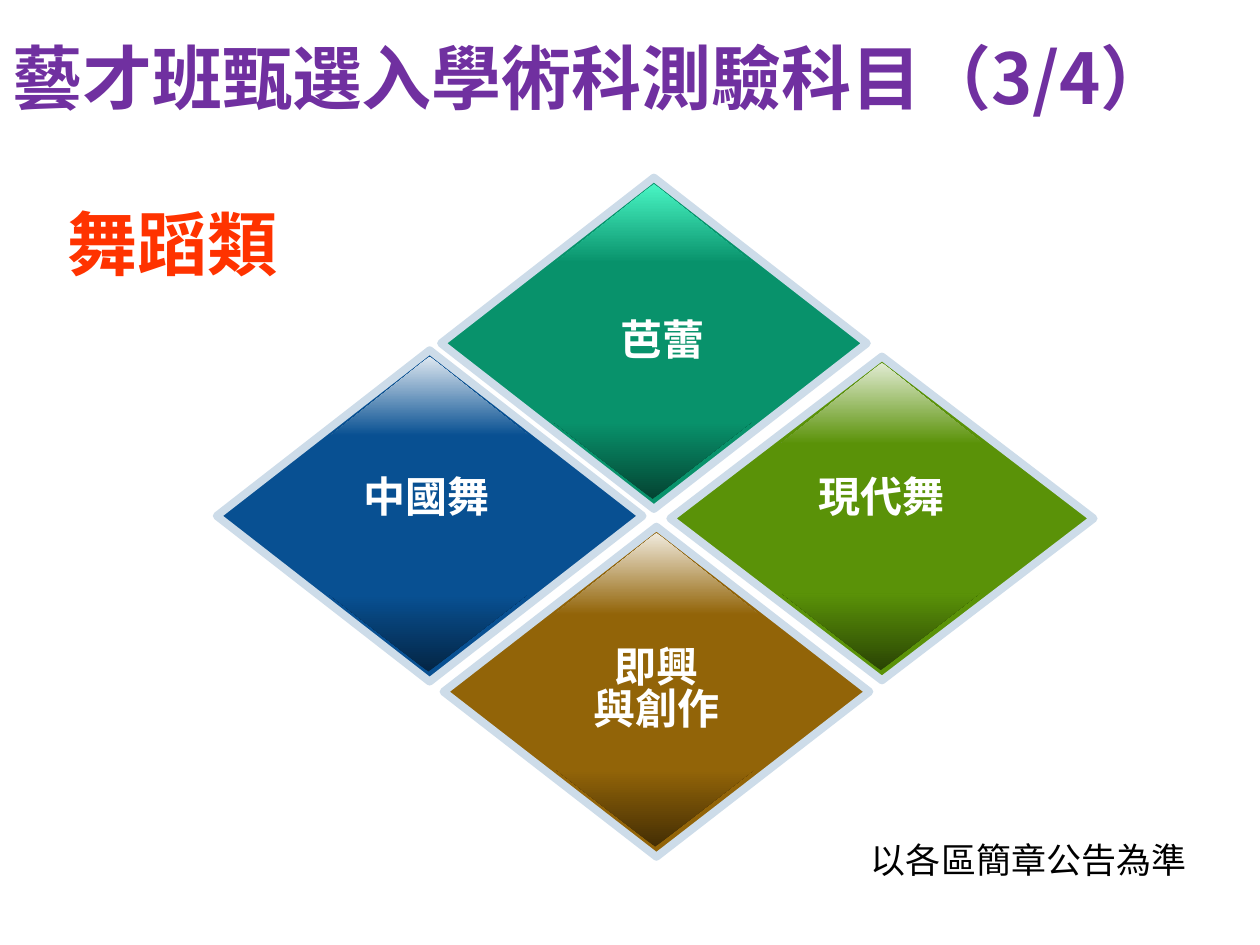
from pptx import Presentation
from pptx.dml.color import RGBColor
from pptx.enum.shapes import MSO_SHAPE
from pptx.enum.text import MSO_ANCHOR, PP_ALIGN
from pptx.util import Inches, Pt

DIAMOND, TRIANGLE = MSO_SHAPE.DIAMOND, MSO_SHAPE.ISOSCELES_TRIANGLE
CENTER, LEFT = PP_ALIGN.CENTER, PP_ALIGN.LEFT
TOP, MIDDLE = MSO_ANCHOR.TOP, MSO_ANCHOR.MIDDLE

COLUMNS, ROWS = 10, 7.5
FONT = "Noto Sans CJK SC"

WHITE = RGBColor(0xFF, 0xFF, 0xFF)
BLACK = RGBColor(0x00, 0x00, 0x00)
PURPLE = RGBColor(0x70, 0x30, 0xA0)
RED = RGBColor(0xFF, 0x33, 0x00)
PALE_BLUE = RGBColor(0xCD, 0xDC, 0xE9)
BROWN = RGBColor(0x92, 0x64, 0x08)
BROWN_LIGHT = RGBColor(0xF0, 0xEA, 0xDD)
BROWN_DARK = RGBColor(0x44, 0x2E, 0x04)
TEAL = RGBColor(0x08, 0x92, 0x6B)
TEAL_LIGHT = RGBColor(0x49, 0xF5, 0xC4)
TEAL_DARK = RGBColor(0x04, 0x44, 0x32)
BLUE = RGBColor(0x08, 0x50, 0x92)
BLUE_LIGHT = RGBColor(0xDD, 0xE7, 0xF0)
BLUE_DARK = RGBColor(0x04, 0x25, 0x44)
GREEN = RGBColor(0x5A, 0x92, 0x08)
GREEN_LIGHT = RGBColor(0xE1, 0xEB, 0xD2)
GREEN_DARK = RGBColor(0x2A, 0x44, 0x04)

TITLE = {"size": Pt(40), "bold": True}
LABEL = {"size": Pt(24), "bold": True}
NOTE = {"size": Pt(20), "bold": False}

DIAMONDS = [
    ((3.52, 4.18, 3.38, 2.62), BROWN, BROWN_LIGHT, BROWN_DARK, 1.62),
    ((3.5, 1.41, 3.38, 2.63), TEAL, TEAL_LIGHT, TEAL_DARK, 1.57),
    ((1.72, 2.78, 3.38, 2.63), BLUE, BLUE_LIGHT, BLUE_DARK, 1.57),
    ((5.32, 2.83, 3.36, 2.57), GREEN, GREEN_LIGHT, GREEN_DARK, 1.61),
]
LABELS = [
    ((4, 2.5, 2.51, 0.69), ["芭蕾"]),
    ((2.33, 3.75, 2.11, 0.69), ["中國舞"]),
    ((5.87, 3.75, 2.26, 0.69), ["現代舞"]),
    ((4.21, 5.1, 2, 1.24), ["即興", "與創作"]),
]


class SubjectSlide:
    def __init__(self, presentation):
        self.column = presentation.slide_width / COLUMNS
        self.row = presentation.slide_height / ROWS
        self.slide = presentation.slides.add_slide(presentation.slide_layouts[6])

    def place(self, area):
        units = (self.column, self.row) * 2
        return [round(length * unit) for length, unit in zip(area, units)]

    def shape(self, kind, area):
        shape = self.slide.shapes.add_shape(kind, *self.place(area))
        shape.shadow.inherit = False
        return shape

    def cap(self, area, tip, base, flipped=False):
        shape = self.shape(TRIANGLE, area)
        shape.line.fill.background()
        shape.fill.gradient()
        shape.fill.gradient_angle = 270
        for stop, color in zip(shape.fill.gradient_stops, (tip, base)):
            stop.color.rgb = color
        if flipped:
            shape._element.spPr.xfrm.set("flipV", "1")

    def diamond(self, area, color, light, dark, cap_width):
        shape = self.shape(DIAMOND, area)
        shape.fill.solid()
        shape.fill.fore_color.rgb = color
        shape.line.color.rgb = PALE_BLUE
        shape.line.width = Pt(4.5)
        left, top, width, height = area
        middle = left + width / 2
        cap_height = cap_width * 0.4
        self.cap((middle - cap_width / 2, top + 0.05, cap_width, cap_height), light, color)
        base_width, base_height = 1.57, 0.61
        base_top = top + height - 0.08 - base_height
        self.cap((middle - 0.01 - base_width / 2, base_top, base_width, base_height),
                 dark, color, flipped=True)

    def text(self, area, lines, style, color, align=CENTER, anchor=TOP, wrap=True, spacing=0.84):
        frame = self.slide.shapes.add_textbox(*self.place(area)).text_frame
        frame.word_wrap = wrap
        frame.vertical_anchor = anchor
        frame.text = "\n".join(lines)
        for paragraph in frame.paragraphs:
            paragraph.alignment = align
            paragraph.line_spacing = spacing
            for run in paragraph.runs:
                for name, value in {**style, "name": FONT}.items():
                    setattr(run.font, name, value)
                run.font.color.rgb = color
                properties = run._r.get_or_add_rPr()
                east_asian = properties.makeelement(
                    properties.tag.replace("rPr", "ea"), {"typeface": FONT})
                properties.append(east_asian)


def main():
    presentation = Presentation()
    presentation.slide_width = Inches(10)
    presentation.slide_height = Inches(7.5)
    subjects = SubjectSlide(presentation)
    subjects.text((0.43, 1.65, 1.88, 0.77), ["舞蹈類"], TITLE, RED, wrap=False)
    for diamond in DIAMONDS:
        subjects.diamond(*diamond)
    for area, lines in LABELS:
        subjects.text(area, lines, LABEL, WHITE)
    subjects.text((0, 0.02, 10, 1.17), ["藝才班甄選入學術科測驗科目（3/4）"],
                  TITLE, PURPLE, align=LEFT, anchor=MIDDLE, spacing=1.0)
    subjects.text((6.8, 6.66, 2.73, 0.44), ["以各區簡章公告為準"], NOTE, BLACK, wrap=False)
    presentation.save("out.pptx")


if __name__ == "__main__":
    main()
